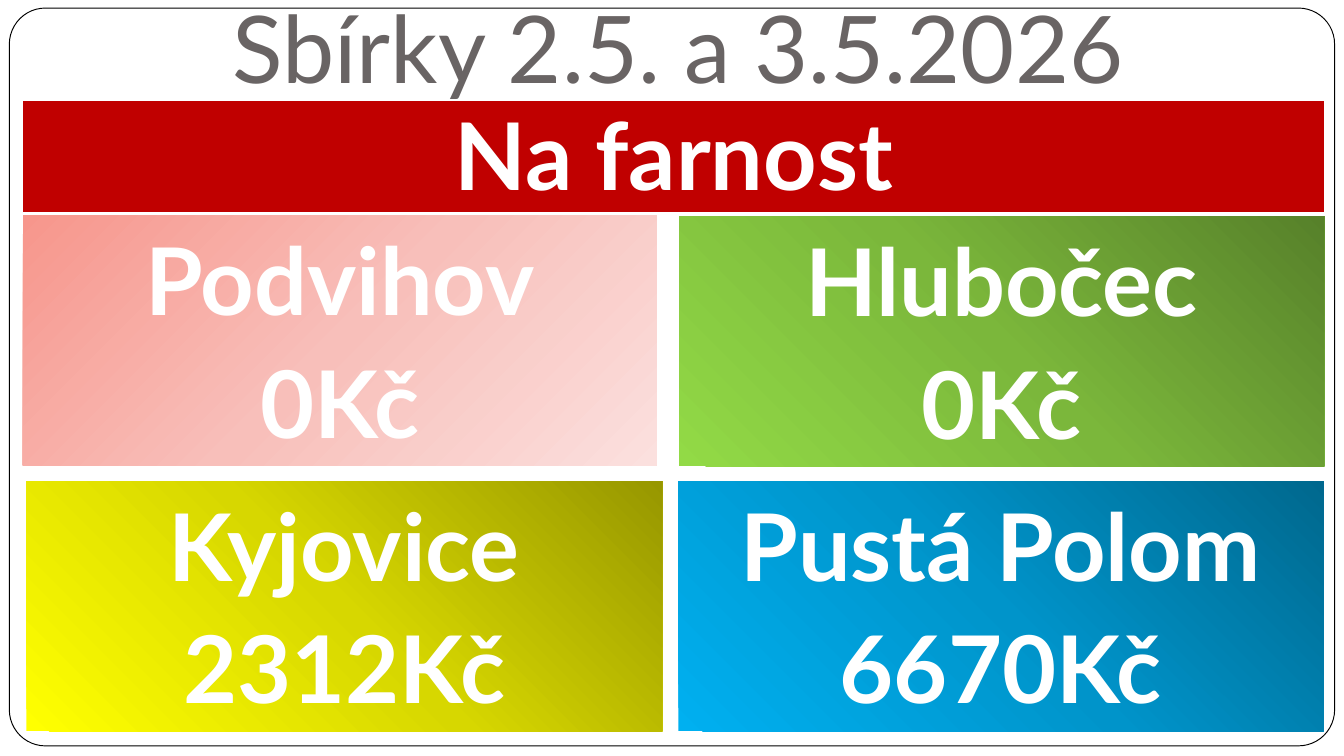
from lxml import etree
from pptx import Presentation
from pptx.dml.color import RGBColor
from pptx.enum.shapes import MSO_SHAPE
from pptx.enum.text import MSO_ANCHOR, PP_ALIGN
from pptx.oxml.ns import qn
from pptx.util import Pt

RECTANGLE = MSO_SHAPE.RECTANGLE
ROUNDED = MSO_SHAPE.ROUNDED_RECTANGLE
TOP, MIDDLE, BOTTOM = MSO_ANCHOR.TOP, MSO_ANCHOR.MIDDLE, MSO_ANCHOR.BOTTOM
CENTER = PP_ALIGN.CENTER

TITLE = "Sbírky 2.5. a 3.5.2026"
BANNER = "Na farnost"
TILE_HEIGHT = 133.9
TILES = [
    {"lines": ["Podvihov", "0Kč"], "place": (12.2, 115.3, 339.8),
     "colors": ["F7968C", "F8BFBA", "FBE0DE"], "radial": False},
    {"lines": ["Hlubočec", "0Kč"], "place": (363.8, 115.9, 345.6),
     "colors": ["57812A", "7BB73B", "92DA46"], "radial": True},
    {"lines": ["Kyjovice", "2312Kč"], "place": (14.2, 257.8, 340.6),
     "colors": ["979700", "D7D700", "FFFF00"], "radial": True},
    {"lines": ["Pustá Polom", "6670Kč"], "place": (363.4, 257.8, 345.6),
     "colors": ["00688E", "0094CA", "00B0F0"], "radial": True},
]
THEME = {
    "font": "Lato",
    "size": 50,
    "title": "696464",
    "white": "FFFFFF",
    "border": "000000",
    "banner": "C00000",
}


def add_box(slide, kind, left, top, width, height, fill=None, line=None, line_width=0.75):
    shape = slide.shapes.add_shape(kind, Pt(left), Pt(top), Pt(width), Pt(height))
    shape.shadow.inherit = False
    if fill:
        shape.fill.solid()
        shape.fill.fore_color.rgb = RGBColor.from_string(fill)
    else:
        shape.fill.background()
    if line:
        shape.line.color.rgb = RGBColor.from_string(line)
        shape.line.width = Pt(line_width)
    else:
        shape.line.fill.background()
    return shape


def set_gradient(shape, colors, radial):
    shape.fill.gradient()
    gradient = shape._element.spPr.find(qn("a:gradFill"))
    for child in list(gradient):
        gradient.remove(child)
    stops = etree.SubElement(gradient, qn("a:gsLst"))
    for index, color in enumerate(colors):
        position = str(index * 100000 // (len(colors) - 1))
        stop = etree.SubElement(stops, qn("a:gs"), pos=position)
        etree.SubElement(stop, qn("a:srgbClr"), val=color)
    if radial:
        circle = etree.SubElement(gradient, qn("a:path"), path="circle")
        etree.SubElement(circle, qn("a:fillToRect"), l="100000", b="100000")
    else:
        etree.SubElement(gradient, qn("a:lin"), ang="2700000", scaled="0")


def write_text(shape, lines, color, bold, anchor, bottom=3.6):
    frame = shape.text_frame
    frame.word_wrap = True
    frame.vertical_anchor = anchor
    frame.margin_left = frame.margin_right = Pt(7.2)
    frame.margin_top, frame.margin_bottom = Pt(3.6), Pt(bottom)
    for index, line in enumerate(lines):
        paragraph = frame.add_paragraph() if index else frame.paragraphs[0]
        paragraph.text = line
        paragraph.alignment = CENTER
        if index:
            paragraph.space_before = Pt(5.8)
        paragraph.font.name = THEME["font"]
        paragraph.font.size = Pt(THEME["size"])
        paragraph.font.bold = bold
        paragraph.font.color.rgb = RGBColor.from_string(color)


def main():
    presentation = Presentation()
    presentation.slide_width, presentation.slide_height = Pt(720), Pt(405)
    slide = presentation.slides.add_slide(presentation.slide_layouts[6])

    card = add_box(slide, ROUNDED, 5, 4.3, 710, 395.3, THEME["white"], THEME["border"], 0.5)
    card.adjustments[0] = 0.049

    title = slide.shapes.add_textbox(Pt(14.4), Pt(0), Pt(697.7), Pt(61.9))
    write_text(title, [TITLE], THEME["title"], False, BOTTOM, 7.2)

    for tile in TILES:
        shape = add_box(slide, RECTANGLE, *tile["place"], TILE_HEIGHT)
        set_gradient(shape, tile["colors"], tile["radial"])
        write_text(shape, tile["lines"], THEME["white"], True, TOP)

    banner = add_box(slide, RECTANGLE, 12.2, 54, 697.7, 59.8, THEME["banner"], THEME["white"])
    write_text(banner, [BANNER], THEME["white"], True, MIDDLE, 7.2)

    presentation.save("out.pptx")


if __name__ == "__main__":
    main()
